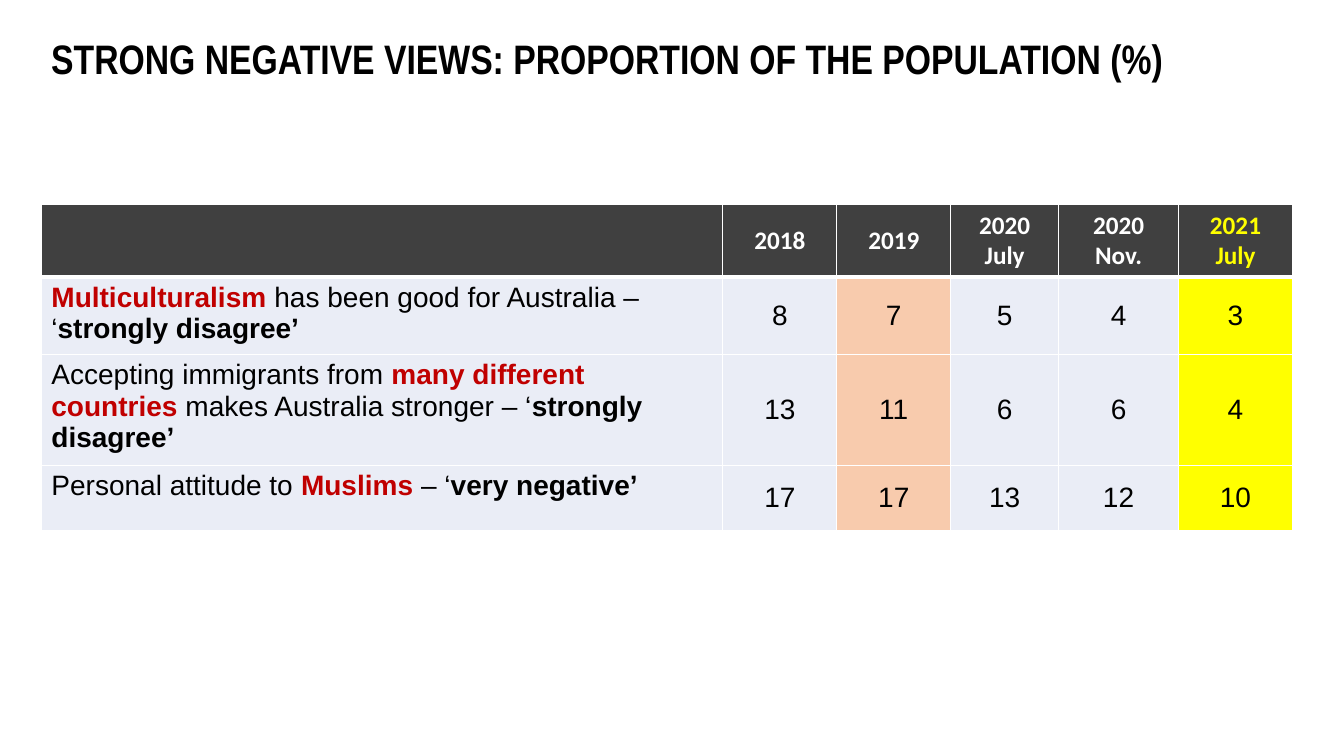
from dataclasses import dataclass
from lxml.etree import SubElement
from pptx import Presentation
from pptx.dml.color import RGBColor as Color
from pptx.enum.text import MSO_ANCHOR as Anchor, PP_ALIGN as Align
from pptx.oxml.ns import qn
from pptx.util import Emu, Pt


@dataclass(frozen=True)
class Theme:
    black: str = "000000"
    white: str = "FFFFFF"
    red: str = "C00000"
    yellow: str = "FFFF00"
    header: str = "404040"
    body: str = "EAEDF6"
    peach: str = "F8CBAD"
    title_size: float = 29.4
    header_size: int = 18
    body_size: int = 20


THEME = Theme()
PLAIN = dict(name="Arial", size=Pt(THEME.body_size), bold=False, color=THEME.black)
STRONG = PLAIN | dict(bold=True)
KEY = STRONG | dict(color=THEME.red)
HEADING = dict(name="Calibri", size=Pt(THEME.header_size), bold=True, color=THEME.white)
LATEST = HEADING | dict(color=THEME.yellow)
TITLE = STRONG | dict(name="Arial Narrow", size=Pt(THEME.title_size))

COLUMN_WIDTHS = [676, 113, 113, 107, 119, 113]
ROW_HEIGHTS = [72, 65, 65, 65]
COLUMN_FILLS = [THEME.body, THEME.body, THEME.peach, THEME.body, THEME.body, THEME.yellow]
PERIODS = [["2018"], ["2019"], ["2020", "July"], ["2020", "Nov."], ["2021 July"]]
VIEWS = [
    ([("Multiculturalism", KEY), (" has been good for Australia – ‘", PLAIN),
      ("strongly disagree’", STRONG)], [8, 7, 5, 4, 3]),
    ([("Accepting immigrants from ", PLAIN), ("many different countries ", KEY),
      ("makes Australia stronger – ‘", PLAIN), ("strongly disagree’", STRONG)],
     [13, 11, 6, 6, 4]),
    ([("Personal attitude to ", PLAIN), ("Muslims", KEY), (" – ‘", PLAIN),
      ("very negative’", STRONG)], [17, 17, 13, 12, 10]),
]


def px(length):
    return Emu(length * 9144)


def set_font(font, style):
    for key, value in style.items():
        if key == "color":
            font.color.rgb = Color.from_string(value)
        else:
            setattr(font, key, value)


def write(frame, lines, align=Align.LEFT):
    for index, spans in enumerate(lines):
        para = frame.add_paragraph() if index else frame.paragraphs[0]
        para.alignment = align
        for text, style in spans:
            span = para.add_run()
            span.text = text
            set_font(span.font, style)


def add_title(page, text):
    box = page.shapes.add_textbox(px(41), px(36), px(1223), px(81))
    frame = box.text_frame
    frame.word_wrap = True
    frame.margin_top = px(10)
    write(frame, [[(text, TITLE)]])
    frame.paragraphs[0].line_spacing = 0.7


def add_border(cell, side, points):
    line = SubElement(cell._tc.get_or_add_tcPr(), qn(f"a:ln{side}"), w=str(Pt(points)))
    fill = SubElement(line, qn("a:solidFill"))
    SubElement(fill, qn("a:srgbClr"), val=THEME.white)


def format_cell(cell, fill, borders):
    for side, points in borders.items():
        add_border(cell, side, points)
    cell.fill.solid()
    cell.fill.fore_color.rgb = Color.from_string(fill)


def fill_header(row):
    for cell in row.cells:
        format_cell(cell, THEME.header, dict(L=1, R=1, T=1, B=3))
    set_font(row.cells[0].text_frame.paragraphs[0].font, HEADING)
    for index, lines in enumerate(PERIODS, start=1):
        style = LATEST if index == len(PERIODS) else HEADING
        cell = row.cells[index]
        cell.vertical_anchor = Anchor.MIDDLE
        write(cell.text_frame, [[(line, style)] for line in lines], Align.CENTER)


def fill_view(row, statement, values):
    for cell, fill in zip(row.cells, COLUMN_FILLS):
        format_cell(cell, fill, dict(L=1, R=1, B=1))
    write(row.cells[0].text_frame, [statement])
    for index, value in enumerate(values, start=1):
        cell = row.cells[index]
        cell.vertical_anchor = Anchor.MIDDLE
        write(cell.text_frame, [[(str(value), PLAIN)]], Align.CENTER)


def add_views_table(page):
    table = page.shapes.add_table(
        len(ROW_HEIGHTS), len(COLUMN_WIDTHS), px(41), px(203),
        px(sum(COLUMN_WIDTHS)), px(sum(ROW_HEIGHTS))).table
    table.horz_banding = False
    for column, width in zip(table.columns, COLUMN_WIDTHS):
        column.width = px(width)
    for row, height in zip(table.rows, ROW_HEIGHTS):
        row.height = px(height)
    fill_header(table.rows[0])
    for index, (statement, values) in enumerate(VIEWS, start=1):
        fill_view(table.rows[index], statement, values)


def main():
    deck = Presentation()
    deck.slide_width, deck.slide_height = px(1333), px(750)
    page = deck.slides.add_slide(deck.slide_layouts[6])
    add_title(page, "STRONG NEGATIVE VIEWS: PROPORTION OF THE POPULATION (%)")
    add_views_table(page)
    deck.save("out.pptx")


if __name__ == "__main__":
    main()
